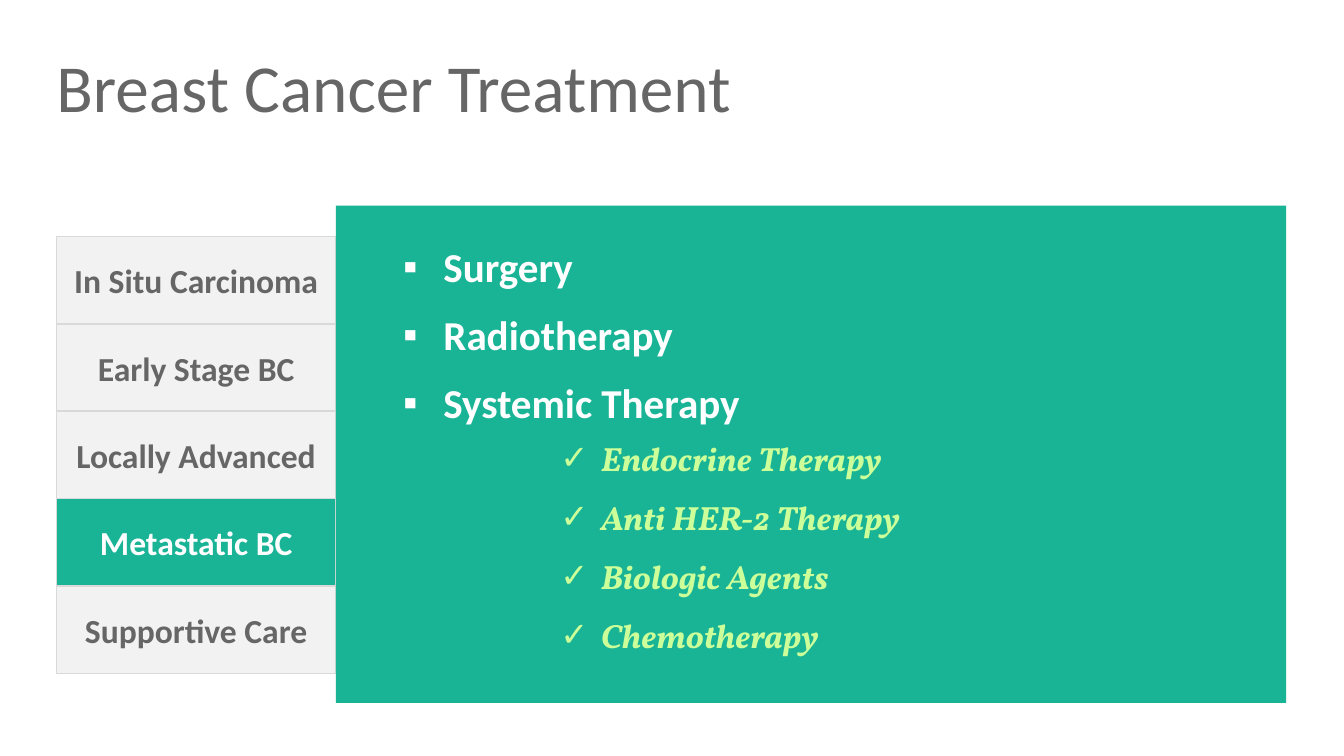
from lxml import etree
from pptx import Presentation
from pptx.dml.color import RGBColor
from pptx.enum.shapes import MSO_SHAPE
from pptx.enum.text import MSO_ANCHOR, PP_ALIGN
from pptx.oxml.ns import qn
from pptx.util import Inches, Pt

RECTANGLE = MSO_SHAPE.RECTANGLE
MIDDLE = MSO_ANCHOR.MIDDLE
TOP = MSO_ANCHOR.TOP
CENTER = PP_ALIGN.CENTER

COLORS = {
    "text": "666666",
    "tab": "F2F2F2",
    "border": "D9D9D9",
    "accent": "19B396",
    "white": "FFFFFF",
    "lime": "CCFF99",
}
STAGES = ["In Situ Carcinoma", "Early Stage BC", "Locally Advanced", "Metastatic BC", "Supportive Care"]
ACTIVE_STAGE = "Metastatic BC"
TREATMENTS = ["Surgery", "Radiotherapy", "Systemic Therapy"]
SYSTEMIC_THERAPIES = ["Endocrine Therapy", "Anti HER-2 Therapy", "Biologic Agents", "Chemotherapy"]


def rgb(name):
    """Return the named palette colour."""
    return RGBColor.from_string(COLORS[name])


def add_run(paragraph, text, size, color, font="Calibri", bold=False, italic=False):
    """Append one styled run to a paragraph."""
    run = paragraph.add_run()
    run.text = text
    run.font.name = font
    run.font.size = Pt(size)
    run.font.bold = bold
    run.font.italic = italic
    run.font.color.rgb = rgb(color)


def add_rectangle(slide, left, top, width, height, fill, border=None):
    """Add a flat rectangle with an optional thin border."""
    shape = slide.shapes.add_shape(RECTANGLE, Inches(left), Inches(top), Inches(width), Inches(height))
    shape.shadow.inherit = False
    shape.fill.solid()
    shape.fill.fore_color.rgb = rgb(fill)
    if border:
        shape.line.color.rgb = rgb(border)
        shape.line.width = Pt(0.75)
    else:
        shape.line.fill.background()
    return shape


def add_text_frame(slide, left, top, width, height, anchor=TOP):
    """Add a wrapping text box without insets and return its frame."""
    box = slide.shapes.add_textbox(Inches(left), Inches(top), Inches(width), Inches(height))
    frame = box.text_frame
    frame.word_wrap = True
    frame.vertical_anchor = anchor
    frame.margin_left = frame.margin_top = frame.margin_right = frame.margin_bottom = 0
    return frame


def add_title(slide, left, top, width, height):
    """Add the slide title."""
    frame = add_text_frame(slide, left, top, width, height, MIDDLE)
    add_run(frame.paragraphs[0], "Breast Cancer Treatment", 36, "text")


def add_stage_tabs(slide, left, top, width, height):
    """Stack one tab for each disease stage, with the active one highlighted."""
    tab_height = height / len(STAGES)
    for index, stage in enumerate(STAGES):
        active = stage == ACTIVE_STAGE
        fill = "accent" if active else "tab"
        tab = add_rectangle(slide, left, top + index * tab_height, width, tab_height, fill, "border")
        tab.text_frame.vertical_anchor = MIDDLE
        paragraph = tab.text_frame.paragraphs[0]
        paragraph.alignment = CENTER
        add_run(paragraph, stage, 18, "white" if active else "text", bold=True)


def add_bullets(slide, left, top, width, height, items, bullet, **style):
    """Add a bulleted list with hanging indents."""
    frame = add_text_frame(slide, left, top, width, height)
    for index, item in enumerate(items):
        paragraph = frame.add_paragraph() if index else frame.paragraphs[0]
        paragraph.space_after = Pt(10)
        properties = paragraph._p.get_or_add_pPr()
        properties.set("marL", str(Inches(0.3)))
        properties.set("indent", str(-Inches(0.3)))
        etree.SubElement(properties, qn("a:buFont")).set("typeface", "Arial")
        etree.SubElement(properties, qn("a:buChar")).set("char", bullet)
        add_run(paragraph, item, bold=True, **style)


def add_treatment_panel(slide, left, top, width, height):
    """Add the panel with treatments and the nested systemic therapies."""
    add_rectangle(slide, left, top, width, height, "accent")
    add_bullets(slide, left + 0.5, top + 0.27, width - 0.74, 1.39,
                TREATMENTS, "▪", size=22, color="white")
    add_bullets(slide, left + 1.67, top + 1.73, width - 2.65, 1.63,
                SYSTEMIC_THERAPIES, "✓", size=18, color="lime", font="Vollkorn", italic=True)


def main():
    """Build and save the slide."""
    presentation = Presentation()
    presentation.slide_width = Inches(10)
    presentation.slide_height = Inches(5.625)
    slide = presentation.slides.add_slide(presentation.slide_layouts[6])
    add_stage_tabs(slide, 0.42, 1.76, 2.08, 3.25)
    add_title(slide, 0.42, 0.37, 9.15, 0.54)
    add_treatment_panel(slide, 2.5, 1.53, 7.07, 3.7)
    presentation.save("out.pptx")


if __name__ == "__main__":
    main()
